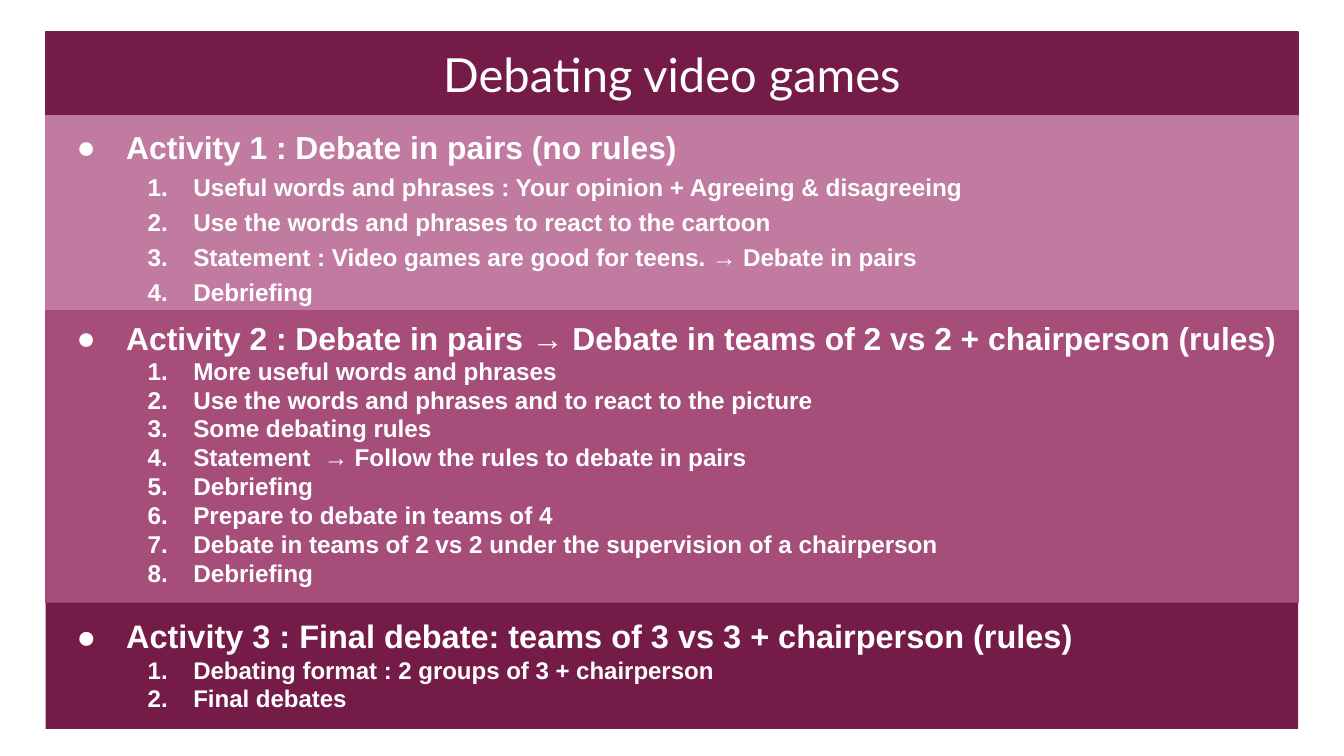
import pptx
import pptx.util
import pptx.dml.color
import pptx.enum.shapes
import pptx.enum.text
import pptx.oxml.ns
import lxml.etree

Pt = pptx.util.Pt

COLORS = {"plum": "741B47", "pink": "C27BA0", "rose": "A64D79", "white": "FFFFFF"}
TITLE = "Debating video games"
ACTIVITIES = [
    {
        "heading": "Activity 1 : Debate in pairs (no rules)",
        "steps": [
            "Useful words and phrases : Your opinion + Agreeing & disagreeing",
            "Use the words and phrases to react to the cartoon",
            "Statement : Video games are good for teens. → Debate in pairs",
            "Debriefing",
        ],
        "fill": "pink", "line": "pink", "height": 104.4,
        "sizes": (17, 13), "spacing": (1.2, 1.2),
    },
    {
        "heading": "Activity 2 : Debate in pairs → Debate in teams of 2 vs 2 + chairperson (rules)",
        "steps": [
            "More useful words and phrases",
            "Use the words and phrases and to react to the picture",
            "Some debating rules",
            "Statement  → Follow the rules to debate in pairs",
            "Debriefing",
            "Prepare to debate in teams of 4",
            "Debate in teams of 2 vs 2 under the supervision of a chairperson",
            "Debriefing",
        ],
        "fill": "rose", "line": "rose", "height": 156.3,
        "sizes": (17, 13), "spacing": (0.83, 0.99),
    },
    {
        "heading": "Activity 3 : Final debate: teams of 3 vs 3 + chairperson (rules)",
        "steps": [
            "Debating format : 2 groups of 3 + chairperson",
            "Final debates",
        ],
        "fill": "plum", "line": None, "height": 67.7,
        "sizes": (17.4, 12.9), "spacing": (0.99, 0.99),
    },
]
LEFT, TOP, WIDTH, TITLE_HEIGHT = 24.5, 17.1, 671, 45
MARGIN = 7.2
INDENTS = [(36, -26.6), (72, -24.5)]
BULLETS = [("a:buChar", {"char": "●"}), ("a:buAutoNum", {"type": "arabicPeriod"})]


def rgb(name):
    return pptx.dml.color.RGBColor.from_string(COLORS[name])


def format_band(shape, fill, line):
    shape.fill.solid()
    shape.fill.fore_color.rgb = rgb(fill)
    if line:
        shape.line.color.rgb = rgb(line)
        shape.line.width = Pt(0.75)
    else:
        shape.line.fill.background()
    frame = shape.text_frame
    frame.word_wrap = True
    frame.auto_size = pptx.enum.text.MSO_AUTO_SIZE.NONE
    frame.vertical_anchor = pptx.enum.text.MSO_ANCHOR.MIDDLE
    frame.margin_left = frame.margin_right = Pt(MARGIN)
    frame.margin_top = frame.margin_bottom = Pt(MARGIN)
    return frame


def add_run(paragraph, text, font, size, bold):
    run = paragraph.add_run()
    run.text = text
    run.font.name = font
    run.font.size = Pt(size)
    run.font.bold = bold
    run.font.color.rgb = rgb("white")


def add_bullet(paragraph, level):
    properties = paragraph._p.get_or_add_pPr()
    margin, indent = INDENTS[level]
    properties.set("marL", str(Pt(margin)))
    properties.set("indent", str(Pt(indent)))
    qn = pptx.oxml.ns.qn
    color = lxml.etree.SubElement(properties, qn("a:buClr"))
    lxml.etree.SubElement(color, qn("a:srgbClr"), val=COLORS["white"])
    lxml.etree.SubElement(properties, qn("a:buFont"), typeface="Arial")
    tag, attributes = BULLETS[level]
    lxml.etree.SubElement(properties, qn(tag), attributes)


def add_title(slide):
    title = slide.shapes.title
    title.left, title.top = Pt(LEFT), Pt(TOP)
    title.width, title.height = Pt(WIDTH), Pt(TITLE_HEIGHT)
    paragraph = format_band(title, "plum", "plum").paragraphs[0]
    paragraph.alignment = pptx.enum.text.PP_ALIGN.CENTER
    add_run(paragraph, TITLE, "Lato", 25.2, False)


def add_activity(slide, activity, top):
    shape = slide.shapes.add_shape(
        pptx.enum.shapes.MSO_SHAPE.RECTANGLE,
        Pt(LEFT), Pt(top), Pt(WIDTH), Pt(activity["height"]))
    shape.shadow.inherit = False
    frame = format_band(shape, activity["fill"], activity["line"])
    for index, text in enumerate([activity["heading"], *activity["steps"]]):
        level = min(index, 1)
        paragraph = frame.add_paragraph() if index else frame.paragraphs[0]
        paragraph.level = level
        paragraph.alignment = pptx.enum.text.PP_ALIGN.LEFT
        paragraph.line_spacing = activity["spacing"][level]
        add_bullet(paragraph, level)
        add_run(paragraph, text, "Arial", activity["sizes"][level], True)


def main():
    presentation = pptx.Presentation()
    presentation.slide_width, presentation.slide_height = Pt(720), Pt(405)
    slide = presentation.slides.add_slide(presentation.slide_layouts[5])
    add_title(slide)
    top = TOP + TITLE_HEIGHT
    for activity in ACTIVITIES:
        add_activity(slide, activity, top)
        top += activity["height"]
    presentation.save("out.pptx")


if __name__ == "__main__":
    main()
